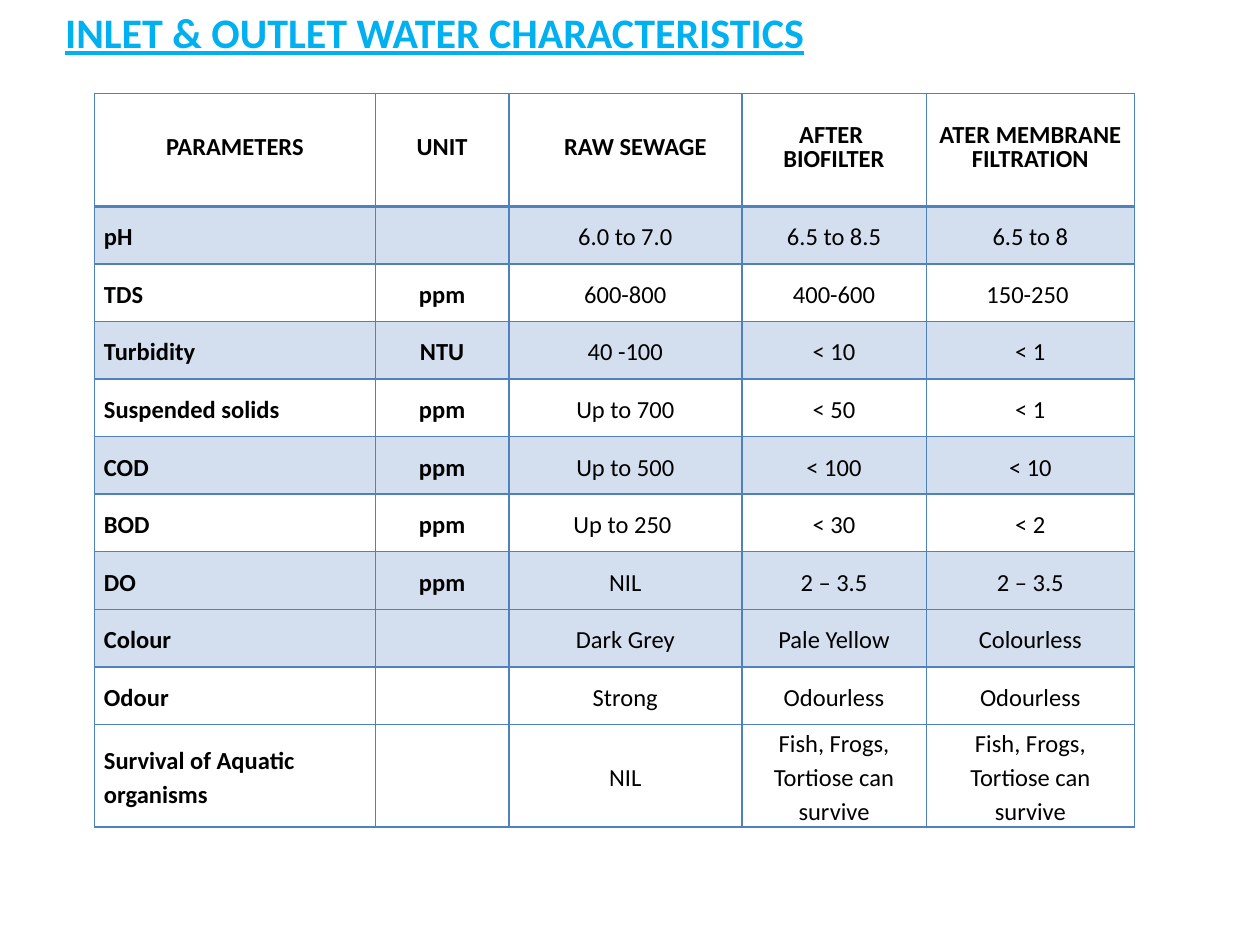
from lxml import etree
from pptx import Presentation
from pptx import util as u
from pptx.dml import color
from pptx.enum import text
from pptx.oxml import ns

HUES = {"title": "00B0F0", "ink": "000000", "line": "4F81BD", "band": "D3DFEE"}
COLS = [160.5, 76.3, 133.1, 105.5, 118.9]
ROWS = [64.5] + [32.9] * 9 + [56.8]
BANDS = {1, 3, 5, 7, 8}
DATA = [
    ["PARAMETERS", "UNIT", "RAW SEWAGE", "AFTER \nBIOFILTER", "ATER MEMBRANE FILTRATION"],
    ["pH", "", "6.0 to 7.0", "6.5 to 8.5", "6.5 to 8"],
    ["TDS", "ppm", "600-800", "400-600", "150-250 "],
    ["Turbidity", "NTU", "40 -100", "< 10", "< 1"],
    ["Suspended solids", "ppm", "Up to 700", "< 50", "< 1"],
    ["COD", "ppm", "Up to 500", "< 100", "< 10"],
    ["BOD", "ppm", "Up to 250 ", "< 30", "< 2"],
    ["DO", "ppm", "NIL", "2 – 3.5", "2 – 3.5"],
    ["Colour", "", "Dark Grey", "Pale Yellow", "Colourless"],
    ["Odour", "", "Strong", "Odourless", "Odourless"],
    ["Survival of Aquatic organisms", "", "NIL",
     "Fish, Frogs, Tortiose can survive", "Fish, Frogs, Tortiose can survive"],
]


def apply(item, form):
    for key, val in form.items():
        setattr(item, key, val)


class Page:
    face = "Calibri"
    cell_form = {
        "margin_left": u.Pt(5.4), "margin_right": u.Pt(5.4),
        "margin_top": 0, "margin_bottom": 0,
        "vertical_anchor": text.MSO_ANCHOR.MIDDLE,
    }

    def __init__(self, deck):
        self.slide = deck.slides.add_slide(deck.slide_layouts[5])

    def style(self, para, hue, **form):
        apply(para.font, {"name": self.face, **form})
        para.font.color.rgb = color.RGBColor.from_string(HUES[hue])

    def title(self, words, left, top, width, height):
        box = self.slide.shapes.title
        apply(box, {"left": u.Pt(left), "top": u.Pt(top),
                    "width": u.Pt(width), "height": u.Pt(height)})
        frame = box.text_frame
        frame.text = words
        apply(frame, {"word_wrap": True, "auto_size": text.MSO_AUTO_SIZE.NONE,
                      "vertical_anchor": text.MSO_ANCHOR.TOP})
        para = frame.paragraphs[0]
        para.alignment = text.PP_ALIGN.LEFT
        self.style(para, "title", size=u.Pt(24), bold=True, underline=True)

    def edge(self, cell, sides):
        props = cell._tc.get_or_add_tcPr()
        for spot, (side, width) in enumerate(sides.items()):
            line = etree.Element(ns.qn(f"a:ln{side}"), w=str(u.Pt(width)))
            fill = etree.SubElement(line, ns.qn("a:solidFill"))
            etree.SubElement(fill, ns.qn("a:srgbClr"), val=HUES["line"])
            props.insert(spot, line)

    def cell(self, cell, words, row, col):
        apply(cell, self.cell_form)
        if row in BANDS:
            cell.fill.solid()
            cell.fill.fore_color.rgb = color.RGBColor.from_string(HUES["band"])
        else:
            cell.fill.background()
        self.edge(cell, {"L": 1, "R": 1, "T": 2.25 if row == 1 else 1,
                         "B": 2.25 if row == 0 else 1})
        cell.text = words
        head = row == 0
        for para in cell.text_frame.paragraphs:
            left = col == 0 and not head
            para.alignment = text.PP_ALIGN.LEFT if left else text.PP_ALIGN.CENTER
            para.line_spacing = u.Pt(13.4) if head else 1.15
            if head and col == 2:
                para._p.get_or_add_pPr().set("marL", str(u.Pt(11.5)))
            self.style(para, "ink", size=u.Pt(14), bold=head or col < 2)

    def table(self, data, left, top):
        frame = self.slide.shapes.add_table(
            len(ROWS), len(COLS), u.Pt(left), u.Pt(top),
            u.Pt(sum(COLS)), u.Pt(sum(ROWS)))
        grid = frame.table
        apply(grid, {"first_row": False, "horz_banding": False})
        for col, width in zip(grid.columns, COLS):
            col.width = u.Pt(width)
        for row, height in zip(grid.rows, ROWS):
            row.height = u.Pt(height)
        for row, line in enumerate(data):
            for col, words in enumerate(line):
                self.cell(grid.cell(row, col), words, row, col)


def main():
    deck = Presentation()
    apply(deck, {"slide_width": u.Pt(720), "slide_height": u.Pt(540)})
    page = Page(deck)
    page.table(DATA, 54, 53.5)
    page.title("INLET & OUTLET WATER CHARACTERISTICS", 30, 0, 450, 58.5)
    deck.save("out.pptx")


if __name__ == "__main__":
    main()
